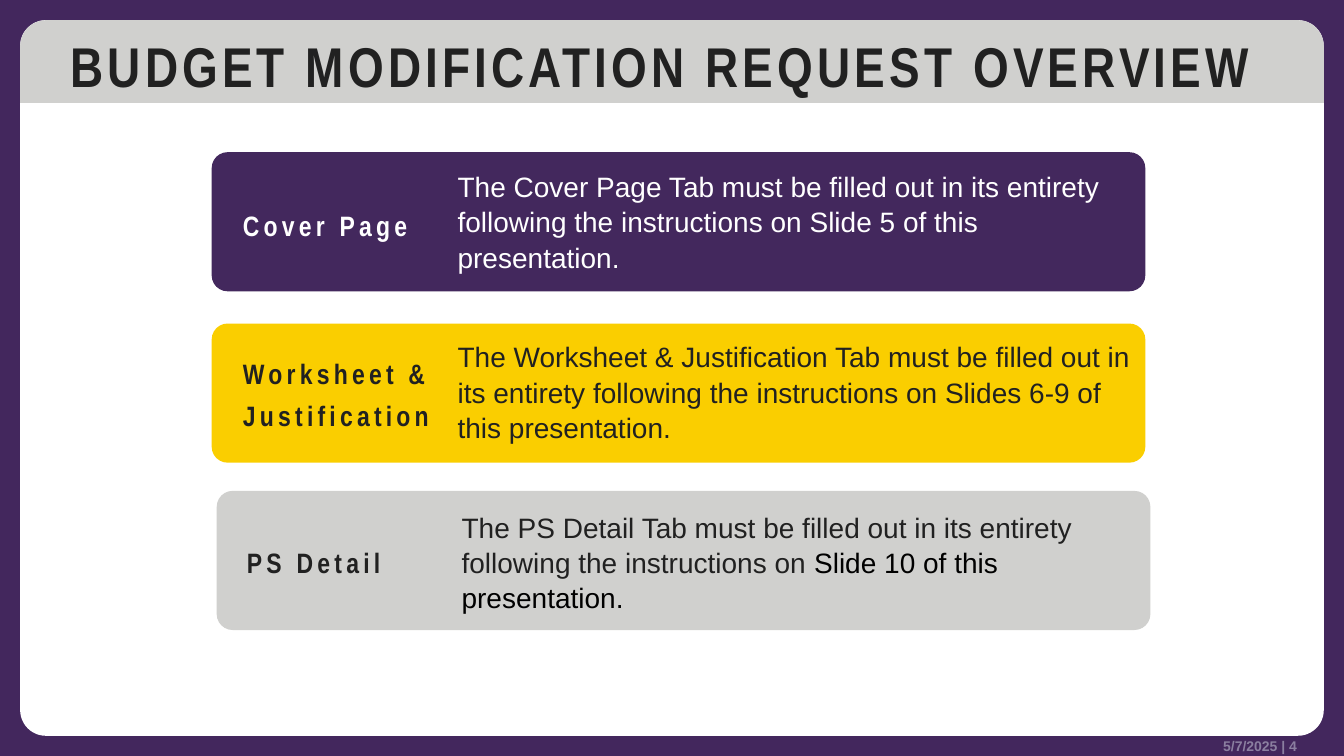
from pptx import Presentation
from pptx.dml.color import RGBColor
from pptx.enum.shapes import MSO_SHAPE
from pptx.enum.text import MSO_ANCHOR, PP_ALIGN
from pptx.util import Pt

PX = 9144  # 100 px to the inch
PURPLE, GOLD, GREY = "43285D", "FACE00", "D0D0CE"
WHITE, INK, BLACK = "FFFFFF", "212121", "000000"

deck = Presentation()
deck.slide_width, deck.slide_height = 1333 * PX, 750 * PX
slide = deck.slides.add_slide(deck.slide_layouts[6])


def color(code):
    return RGBColor.from_string(code)


def add(box, text="", shape=None, fill=None, adj=(), runs=(), size=20, font="Arial",
        ink=INK, bold=False, track=0, pad=(10, 5, 10, 5), align=PP_ALIGN.LEFT,
        anchor=MSO_ANCHOR.MIDDLE, lead=None, after=0):
    place = [n * PX for n in box]
    if shape:
        item = slide.shapes.add_shape(shape, *place)
        item.shadow.inherit = False
        item.fill.solid()
        item.fill.fore_color.rgb = color(fill)
        item.line.fill.background()
        for i, value in enumerate(adj):
            item.adjustments[i] = value
        return
    frame = slide.shapes.add_textbox(*place).text_frame
    frame.word_wrap = True
    frame.vertical_anchor = anchor
    (frame.margin_left, frame.margin_top,
     frame.margin_right, frame.margin_bottom) = [n * PX for n in pad]
    para = frame.paragraphs[0]
    para.alignment = align
    para.space_after = Pt(after)
    if lead:
        para.line_spacing = lead
    for words, tint in runs or [(text, ink)]:
        run = para.add_run()
        run.text = words
        run.font.name, run.font.size, run.font.bold = font, Pt(size), bold
        run.font.color.rgb = color(tint)
        if track:
            run.font._element.set("spc", str(track * 100))


# Frame
slide.background.fill.solid()
slide.background.fill.fore_color.rgb = color("43275D")
add((20, 20, 1293, 710), shape=MSO_SHAPE.ROUNDED_RECTANGLE, fill=WHITE, adj=[0.036])
add((20, 20, 1293, 82), shape=MSO_SHAPE.ROUND_2_SAME_RECTANGLE, fill=GREY, adj=[0.315, 0])

# Title and footer
head = {"font": "Arial Narrow", "bold": True, "track": 3}
add((20, 26, 1293, 77), "BUDGET MODIFICATION REQUEST OVERVIEW", size=40,
    pad=(50, 5, 50, 5), **head)
add((819, 731, 471, 17), "5/7/2025 | 4 ", size=10, ink="8B7FA0", bold=True,
    pad=(0, 0, 0, 0), align=PP_ALIGN.RIGHT, anchor=MSO_ANCHOR.BOTTOM)

# Bars: left, top, fill, label, label left, top and width, body top, ink, body runs
bars = [
    (210, 151, PURPLE, "Cover Page", 211, 150, 233, 150, WHITE,
     [("The Cover Page Tab must be filled out in its entirety following "
       "the instructions on Slide 5 of this presentation.", WHITE)]),
    (210, 321, GOLD, "Worksheet & Justification", 211, 318, 241, 319, INK,
     [("The Worksheet & Justification Tab must be filled out in its entirety "
       "following the instructions on Slides 6-9 of this presentation.", INK)]),
    (215, 487, GREY, "PS Detail", 215, 485, 233, 488, INK,
     [("The PS Detail Tab must be filled out in its entirety following "
       "the instructions on ", INK), ("Slide 10 of this presentation.", BLACK)]),
]
for left, top, fill, label, x, y, wide, down, ink, body in bars:
    add((left, top, 926, 138), shape=MSO_SHAPE.ROUNDED_RECTANGLE, fill=fill, adj=[0.114])
    add((x, y, wide, 138), label, ink=ink, pad=(30, 5, 10, 5), lead=Pt(30), after=18, **head)
    add((x + 233, down, 693, 138), runs=body, lead=1.05, after=18)

deck.save("out.pptx")
